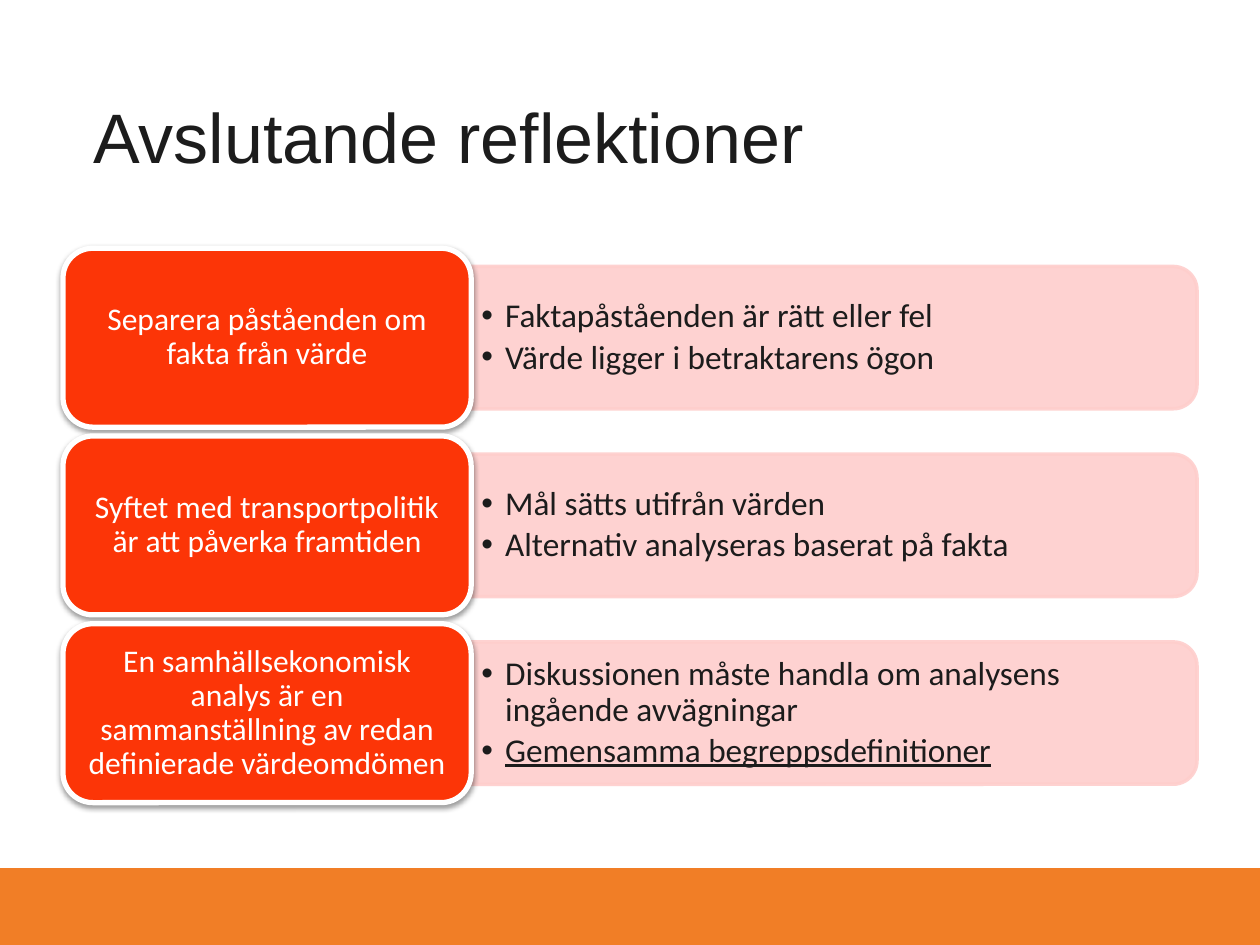
import dataclasses

import lxml.etree
import pptx
import pptx.dml.color
import pptx.enum.shapes
import pptx.enum.text
import pptx.oxml
import pptx.oxml.ns
import pptx.util

Inches = pptx.util.Inches
Pt = pptx.util.Pt
Shape = pptx.enum.shapes.MSO_SHAPE
Align = pptx.enum.text.PP_ALIGN


@dataclasses.dataclass(frozen=True)
class Theme:
    ink: str = "1C1C1C"
    white: str = "FFFFFF"
    label: str = "FC3507"
    panel: str = "FECECC"
    footer: str = "F17E26"
    heading_font: str = "Arial"
    body_font: str = "Calibri"
    title_size: int = 40
    label_size: int = 18
    point_size: int = 19


class ReflectionSlide:
    def __init__(self, slide, theme):
        self.slide = slide
        self.theme = theme

    def block(self, kind, left, top, width, height, fill, line=None, line_width=0):
        block = self.slide.shapes.add_shape(
            kind, Inches(left), Inches(top), Inches(width), Inches(height))
        block.shadow.inherit = False
        block.fill.solid()
        block.fill.fore_color.rgb = pptx.dml.color.RGBColor.from_string(fill)
        if line:
            block.line.color.rgb = pptx.dml.color.RGBColor.from_string(line)
            block.line.width = Pt(line_width)
        else:
            block.line.fill.background()
        return block

    def frame(self, holder, insets):
        frame = holder.text_frame
        frame.word_wrap = True
        frame.vertical_anchor = pptx.enum.text.MSO_ANCHOR.MIDDLE
        (frame.margin_left, frame.margin_top,
         frame.margin_right, frame.margin_bottom) = map(Inches, insets)
        return frame

    def textbox(self, left, top, width, height):
        return self.slide.shapes.add_textbox(
            Inches(left), Inches(top), Inches(width), Inches(height))

    def style(self, paragraph, font, size, color, align=Align.LEFT, spacing=0.9):
        paragraph.alignment = align
        paragraph.line_spacing = spacing
        for run in paragraph.runs:
            run.font.name = font
            run.font.size = Pt(size)
            run.font.color.rgb = pptx.dml.color.RGBColor.from_string(color)

    def footer(self):
        self.block(Shape.RECTANGLE, 0, 6.89, 10, 0.61, self.theme.footer)

    def title(self, text):
        frame = self.frame(self.textbox(0.5, 0.51, 9, 1.25), (0.24, 0.05, 0.1, 0.05))
        frame.text = text
        self.style(frame.paragraphs[0], self.theme.heading_font,
                   self.theme.title_size, self.theme.ink, spacing=0.8)

    def panel(self, middle):
        length, thickness, center = 5.76, 1.13, 6.62
        panel = self.block(
            Shape.ROUND_2_SAME_RECTANGLE, center - thickness / 2, middle - length / 2,
            thickness, length, self.theme.panel, self.theme.panel, 2)
        panel.rotation = 90
        for color in panel.element.spPr.iter(pptx.oxml.ns.qn("a:srgbClr")):
            lxml.etree.SubElement(color, pptx.oxml.ns.qn("a:alpha"), val="90000")

    def points(self, middle, points, underlined):
        frame = self.frame(self.textbox(3.74, middle - 0.51, 5.7, 1.02),
                           (0.08, 0.04, 0.08, 0.04))
        frame.text = "\n".join(points)
        for paragraph in frame.paragraphs:
            paragraph.level = 1
            properties = paragraph._p.get_or_add_pPr()
            properties.set("marL", str(Inches(0.19)))
            properties.set("indent", str(-Inches(0.19)))
            lxml.etree.SubElement(properties, pptx.oxml.ns.qn("a:buFont"), typeface="Arial")
            lxml.etree.SubElement(properties, pptx.oxml.ns.qn("a:buChar"), char="•")
            self.style(paragraph, self.theme.body_font,
                       self.theme.point_size, self.theme.ink)
            paragraph.space_after = Pt(3)
            if paragraph.text == underlined:
                paragraph.runs[0].font.underline = True

    def label(self, middle, text):
        label = self.block(Shape.ROUNDED_RECTANGLE, 0.5, middle - 0.71, 3.24, 1.42,
                           self.theme.label, self.theme.white, 3)
        effects = label.element.spPr.find(pptx.oxml.ns.qn("a:effectLst"))
        effects.append(pptx.oxml.parse_xml(
            f'<a:outerShdw {pptx.oxml.ns.nsdecls("a")} blurRad="{Pt(3.1)}" '
            f'dist="{Pt(1.6)}" dir="5400000" rotWithShape="0">'
            '<a:srgbClr val="000000"><a:alpha val="38000"/></a:srgbClr></a:outerShdw>'))
        frame = self.frame(label, (0.07, 0.04, 0.07, 0.04))
        frame.text = text
        self.style(frame.paragraphs[0], self.theme.body_font, self.theme.label_size,
                   self.theme.white, Align.CENTER)


def main():
    """Build the slide of closing reflections and save it."""
    deck = pptx.Presentation()
    deck.slide_width, deck.slide_height = Inches(10), Inches(7.5)
    page = ReflectionSlide(deck.slides.add_slide(deck.slide_layouts[6]), Theme())
    definitions = "Gemensamma begreppsdefinitioner"
    reflections = [
        ("Separera påståenden om fakta från värde",
         ["Faktapåståenden är rätt eller fel", "Värde ligger i betraktarens ögon"]),
        ("Syftet med transportpolitik är att påverka framtiden",
         ["Mål sätts utifrån värden", "Alternativ analyseras baserat på fakta"]),
        ("En samhällsekonomisk analys är en sammanställning av redan "
         "definierade värdeomdömen",
         ["Diskussionen måste handla om analysens ingående avvägningar", definitions]),
    ]
    page.footer()
    page.title("Avslutande reflektioner")
    for row, (statement, points) in enumerate(reflections):
        middle = 2.68 + 1.49 * row
        page.panel(middle)
        page.points(middle, points, definitions)
        page.label(middle, statement)
    deck.save("out.pptx")


if __name__ == "__main__":
    main()
